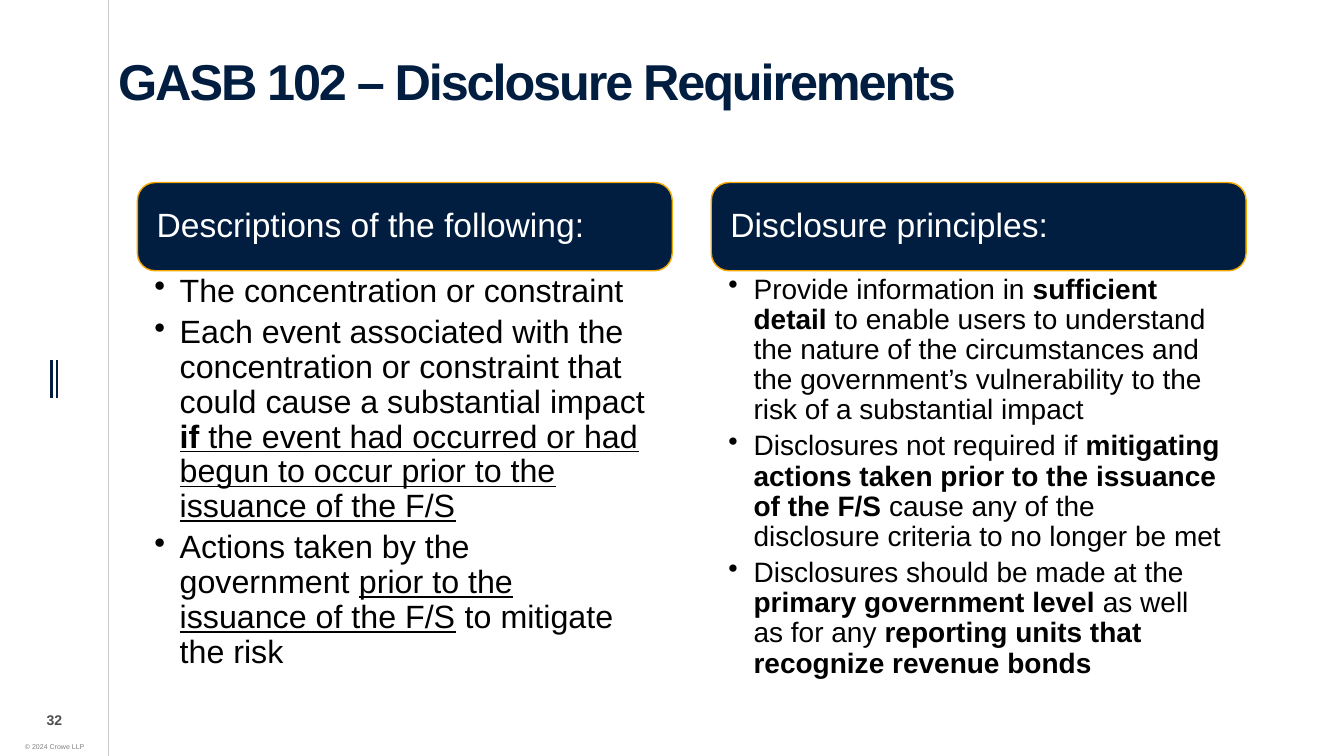
from lxml import etree
from pptx import Presentation
from pptx.dml.color import RGBColor
from pptx.enum.shapes import MSO_CONNECTOR, MSO_SHAPE
from pptx.enum.text import MSO_ANCHOR, MSO_AUTO_SIZE, PP_ALIGN
from pptx.oxml.ns import qn
from pptx.util import Pt

STRAIGHT = MSO_CONNECTOR.STRAIGHT
ROUNDED = MSO_SHAPE.ROUNDED_RECTANGLE
TOP, MIDDLE = MSO_ANCHOR.TOP, MSO_ANCHOR.MIDDLE
LEFT, CENTER = PP_ALIGN.LEFT, PP_ALIGN.CENTER
NO_AUTOFIT = MSO_AUTO_SIZE.NONE

COLORS = {
    "navy": "011E41",
    "gold": "F5A800",
    "white": "FFFFFF",
    "black": "000000",
    "rule": "CCCCCC",
    "number": "4D4D4D",
    "copyright": "808080",
}

# Column geometry
COLUMN_LEFT, COLUMN_STEP, COLUMN_WIDTH = 98.2, 409.9, 382
HEADER_TOP, HEADER_HEIGHT, BODY_HEIGHT = 130.4, 63, 287

# Each column: heading, bullet size, bullets made of (text, marks) pieces;
# marks: b = bold, u = underlined
COLUMNS = [
    ("Descriptions of the following:", 23, [
        [("The concentration or constraint", "")],
        [("Each event associated with the concentration or constraint that "
          "could cause a substantial impact ", ""),
         ("if", "bu"),
         (" the event had occurred or had begun to occur prior to the "
          "issuance of the F/S", "u")],
        [("Actions taken by the government ", ""),
         ("prior to the issuance of the F/S", "u"),
         (" to mitigate the risk", "")],
    ]),
    ("Disclosure principles:", 20, [
        [("Provide information in ", ""),
         ("sufficient detail ", "b"),
         ("to enable users to understand the nature of the circumstances and "
          "the government’s vulnerability to the risk of a substantial impact",
          "")],
        [("Disclosures not required if ", ""),
         ("mitigating actions taken prior to the issuance of the F/S", "b"),
         (" cause any of the disclosure criteria to no longer be met", "")],
        [("Disclosures should be made at the ", ""),
         ("primary government level", "b"),
         (" as well as for any ", ""),
         ("reporting units that recognize revenue bonds", "b")],
    ]),
]


def rgb(name):
    return RGBColor.from_string(COLORS[name])


def set_font(paragraph, size, color, bold=None):
    font = paragraph.font
    font.name = "Arial"
    font.size = Pt(size)
    font.bold = bold
    font.color.rgb = rgb(color)


def set_frame(frame, anchor, left=0, top=0, right=0, bottom=0):
    frame.word_wrap = True
    frame.auto_size = NO_AUTOFIT
    frame.vertical_anchor = anchor
    frame.margin_left, frame.margin_top = Pt(left), Pt(top)
    frame.margin_right, frame.margin_bottom = Pt(right), Pt(bottom)


def add_rule(slide, x, top, bottom, color, width):
    rule = slide.shapes.add_connector(STRAIGHT, Pt(x), Pt(top), Pt(x), Pt(bottom))
    rule.line.color.rgb = rgb(color)
    rule.line.width = Pt(width)
    etree.SubElement(rule._element.spPr, qn("a:effectLst"))


def add_label(slide, text, left, top, width, height, size, color, bold=None):
    label = slide.shapes.add_textbox(Pt(left), Pt(top), Pt(width), Pt(height))
    set_frame(label.text_frame, MIDDLE)
    line = label.text_frame.paragraphs[0]
    line.text = text
    line.alignment = CENTER
    set_font(line, size, color, bold)


def set_title(slide, text):
    title = slide.shapes.title
    title.left, title.top = Pt(84.4), Pt(28.8)
    title.width, title.height = Pt(792), Pt(108)
    set_frame(title.text_frame, TOP, top=15)
    line = title.text_frame.paragraphs[0]
    line.text = text
    line.alignment = LEFT
    line.line_spacing = 0.8
    set_font(line, 36, "navy", True)
    line.runs[0]._r.get_or_add_rPr().set("spc", "-150")


def add_header(slide, text, left):
    header = slide.shapes.add_shape(
        ROUNDED, Pt(left), Pt(HEADER_TOP), Pt(COLUMN_WIDTH), Pt(HEADER_HEIGHT))
    header.adjustments[0] = 0.2
    header.shadow.inherit = False
    header.fill.solid()
    header.fill.fore_color.rgb = rgb("navy")
    header.line.color.rgb = rgb("gold")
    header.line.width = Pt(1)
    set_frame(header.text_frame, MIDDLE, 10, 10, 10, 10)
    line = header.text_frame.paragraphs[0]
    line.text = text
    line.alignment = LEFT
    line.line_spacing = 0.9
    set_font(line, 24, "white")


def add_bullets(slide, bullets, left, size):
    body = slide.shapes.add_textbox(
        Pt(left), Pt(HEADER_TOP + HEADER_HEIGHT), Pt(COLUMN_WIDTH), Pt(BODY_HEIGHT))
    frame = body.text_frame
    set_frame(frame, TOP, 12.2, 2.9, 16.6, 2.9)
    for index, pieces in enumerate(bullets):
        bullet = frame.add_paragraph() if index else frame.paragraphs[0]
        bullet.line_spacing = 0.9
        bullet.space_after = Pt(0.2 * size)
        properties = bullet._p.get_or_add_pPr()
        properties.set("marL", str(Pt(18)))
        properties.set("indent", str(Pt(-18)))
        etree.SubElement(properties, qn("a:buChar"), char="•")
        set_font(bullet, size, "black")
        for text, marks in pieces:
            run = bullet.add_run()
            run.text = text
            if "b" in marks:
                run.font.bold = True
            if "u" in marks:
                run.font.underline = True


def main():
    deck = Presentation()
    deck.slide_width, deck.slide_height = Pt(960), Pt(540)
    slide = deck.slides.add_slide(deck.slide_layouts[5])

    # Left margin
    for x in (36.8, 40.6):
        add_rule(slide, x, 257, 284.4, "navy", 1.5)
    add_rule(slide, 77.6, 0, 540, "rule", 0.5)
    add_label(slide, "© 2024 Crowe LLP", 10, 526.3, 58.3, 13.7, 5, "copyright")
    add_label(slide, "32", 18.7, 505.4, 40.3, 18, 10, "number", True)

    # Title and the two columns
    set_title(slide, "GASB 102 – Disclosure Requirements")
    for index, (heading, size, bullets) in enumerate(COLUMNS):
        left = COLUMN_LEFT + index * COLUMN_STEP
        add_header(slide, heading, left)
        add_bullets(slide, bullets, left, size)

    deck.save("out.pptx")


if __name__ == "__main__":
    main()
